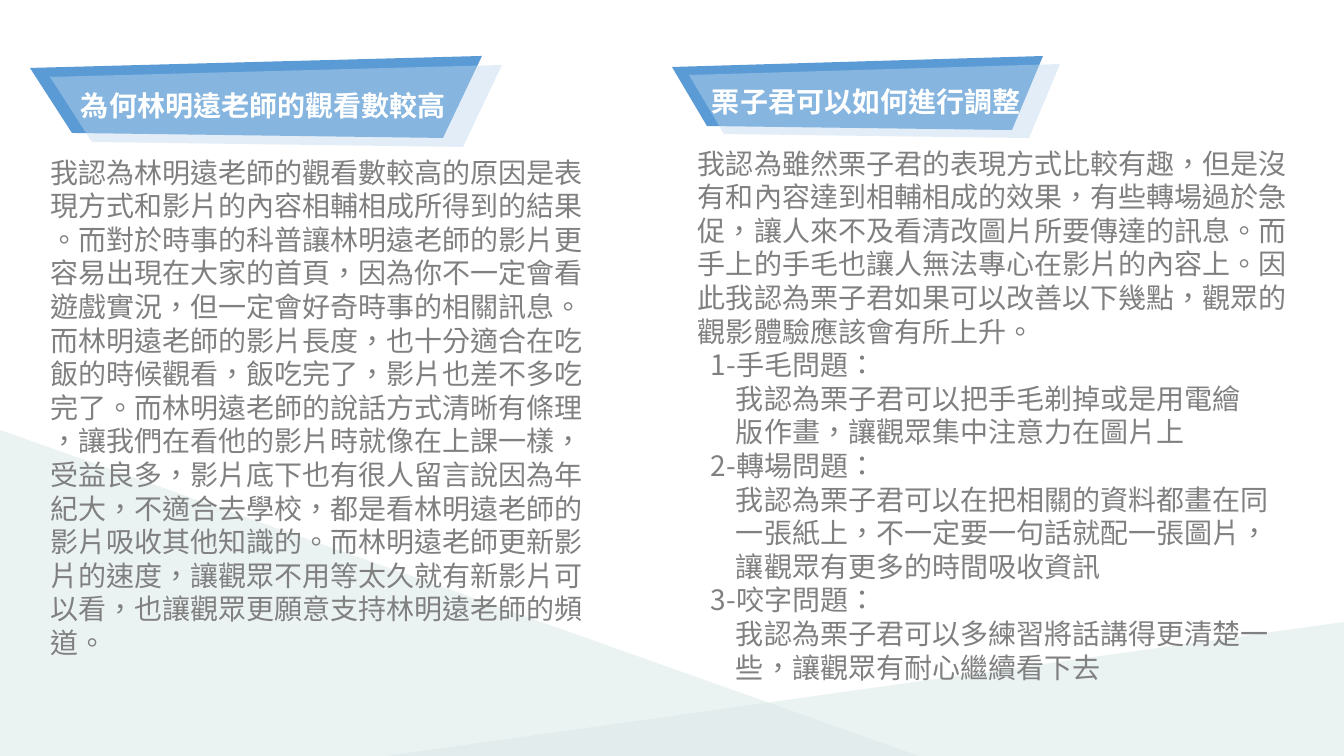
from lxml import etree
from pptx import Presentation, util as u
from pptx.dml.color import RGBColor
from pptx.enum import shapes, text
from pptx.oxml.ns import qn

PX = 914400 / 100.8
FONT = "Noto Sans CJK TC"
COLORS = {"hill": "DDE9E8", "banner": "5B9BD5", "overlay": "BDD7EE",
          "heading": "FFFFFF", "body": "808080"}
INDENTS = {"plain": 0, "item": 13, "detail": 38}

LEFT_TEXT = [
    ("plain", "我認為林明遠老師的觀看數較高的原因是表現方式和影片的內容相輔相成所得到的結果"),
    ("plain", "。而對於時事的科普讓林明遠老師的影片更容易出現在大家的首頁，因為你不一定會看遊戲實況，"
              "但一定會好奇時事的相關訊息。而林明遠老師的影片長度，也十分適合在吃飯的時候觀看，"
              "飯吃完了，影片也差不多吃完了。而林明遠老師的說話方式清晰有條理"),
    ("plain", "，讓我們在看他的影片時就像在上課一樣，受益良多，影片底下也有很人留言說因為年紀大，"
              "不適合去學校，都是看林明遠老師的影片吸收其他知識的。而林明遠老師更新影片的速度，"
              "讓觀眾不用等太久就有新影片可以看，也讓觀眾更願意支持林明遠老師的頻道。"),
]
RIGHT_TEXT = [
    ("plain", "我認為雖然栗子君的表現方式比較有趣，但是沒有和內容達到相輔相成的效果，"
              "有些轉場過於急促，讓人來不及看清改圖片所要傳達的訊息。"
              "而手上的手毛也讓人無法專心在影片的內容上。"
              "因此我認為栗子君如果可以改善以下幾點，觀眾的觀影體驗應該會有所上升。"),
    ("item", "1-手毛問題："),
    ("detail", "我認為栗子君可以把手毛剃掉或是用電繪"),
    ("detail", "版作畫，讓觀眾集中注意力在圖片上"),
    ("item", "2-轉場問題："),
    ("detail", "我認為栗子君可以在把相關的資料都畫在同"),
    ("detail", "一張紙上，不一定要一句話就配一張圖片，"),
    ("detail", "讓觀眾有更多的時間吸收資訊"),
    ("item", "3-咬字問題："),
    ("detail", "我認為栗子君可以多練習將話講得更清楚一"),
    ("detail", "些，讓觀眾有耐心繼續看下去"),
]
# Corners of each banner, shift of its overlay, heading and body boxes
COLUMNS = [
    {"corners": [(30, 68), (72, 133), (443, 138), (482, 56)], "shift": (20, 9),
     "heading": "為何林明遠老師的觀看數較高", "heading_box": (81, 65, 380, 81),
     "body": LEFT_TEXT, "body_box": (50, 155, 560, 509)},
    {"corners": [(672, 67), (707, 126), (1012, 130), (1043, 56)], "shift": (17, 8),
     "heading": "栗子君可以如何進行調整", "heading_box": (712, 64, 330, 74),
     "body": RIGHT_TEXT, "body_box": (698, 146, 608, 543)},
]


def paint(shape, color, opacity=100):
    shape.shadow.inherit = False
    shape.line.fill.background()
    shape.fill.solid()
    shape.fill.fore_color.rgb = RGBColor.from_string(COLORS[color])
    if opacity < 100:
        tint = shape.fill._xPr.find(".//" + qn("a:srgbClr"))
        etree.SubElement(tint, qn("a:alpha"), val=str(opacity * 1000))


def write(box, place, lines, color, bold, anchor):
    box.left, box.top, box.width, box.height = [round(n * PX) for n in place]
    parent = box._element.getparent()
    parent.append(box._element)  # bring to the front
    frame = box.text_frame
    frame_format = {"word_wrap": True, "auto_size": text.MSO_AUTO_SIZE.NONE,
                    "vertical_anchor": anchor, "margin_left": 0, "margin_top": 0,
                    "margin_right": 0, "margin_bottom": 0}
    for name, value in frame_format.items():
        setattr(frame, name, value)
    para_format = {"alignment": text.PP_ALIGN.LEFT, "line_spacing": u.Pt(24),
                   "space_before": u.Pt(0), "space_after": u.Pt(0)}
    for number, (level, words) in enumerate(lines):
        para = frame.add_paragraph() if number else frame.paragraphs[0]
        for name, value in para_format.items():
            setattr(para, name, value)
        props = para._p.get_or_add_pPr()
        props.set("marL", str(round(INDENTS[level] * PX)))
        props.set("indent", "0")
        etree.SubElement(props, qn("a:buNone"))
        span = para.add_run()
        span.text = words
        for name, value in {"name": FONT, "size": u.Pt(20), "bold": bold}.items():
            setattr(span.font, name, value)
        span.font.color.rgb = RGBColor.from_string(COLORS[color])
        run_props = span._r.get_or_add_rPr()
        run_props.set("lang", "zh-TW")
        etree.SubElement(run_props, qn("a:ea"), typeface=FONT)


deck = Presentation()
deck.slide_width, deck.slide_height = round(1344 * PX), round(756 * PX)
page = deck.slides.add_slide(deck.slide_layouts[4])
title = page.shapes.title._element
title.getparent().remove(title)

# Background hills
for place, flipped in [((386, 621, 965, 135), True), ((0, 430, 919, 326), False)]:
    hill = page.shapes.add_shape(shapes.MSO_SHAPE.RIGHT_TRIANGLE,
                                 *[round(n * PX) for n in place])
    paint(hill, "hill", 56)
    if flipped:
        hill._element.spPr.find(qn("a:xfrm")).set("flipH", "1")

# Two columns: banner, overlay, heading and body
for index, column in enumerate(COLUMNS):
    for (dx, dy), color, opacity in [((0, 0), "banner", 100),
                                     (column["shift"], "overlay", 44)]:
        corners = [(x + dx, y + dy) for x, y in column["corners"]]
        outline = page.shapes.build_freeform(*corners[0], scale=PX)
        outline.add_line_segments(corners[1:], close=True)
        paint(outline.convert_to_shape(), color, opacity)
    heading, body = [page.placeholders[2 * index + offset] for offset in (1, 2)]
    write(heading, column["heading_box"], [("plain", column["heading"])],
          "heading", True, text.MSO_ANCHOR.MIDDLE)
    write(body, column["body_box"], column["body"], "body", False, text.MSO_ANCHOR.TOP)

deck.save("out.pptx")
